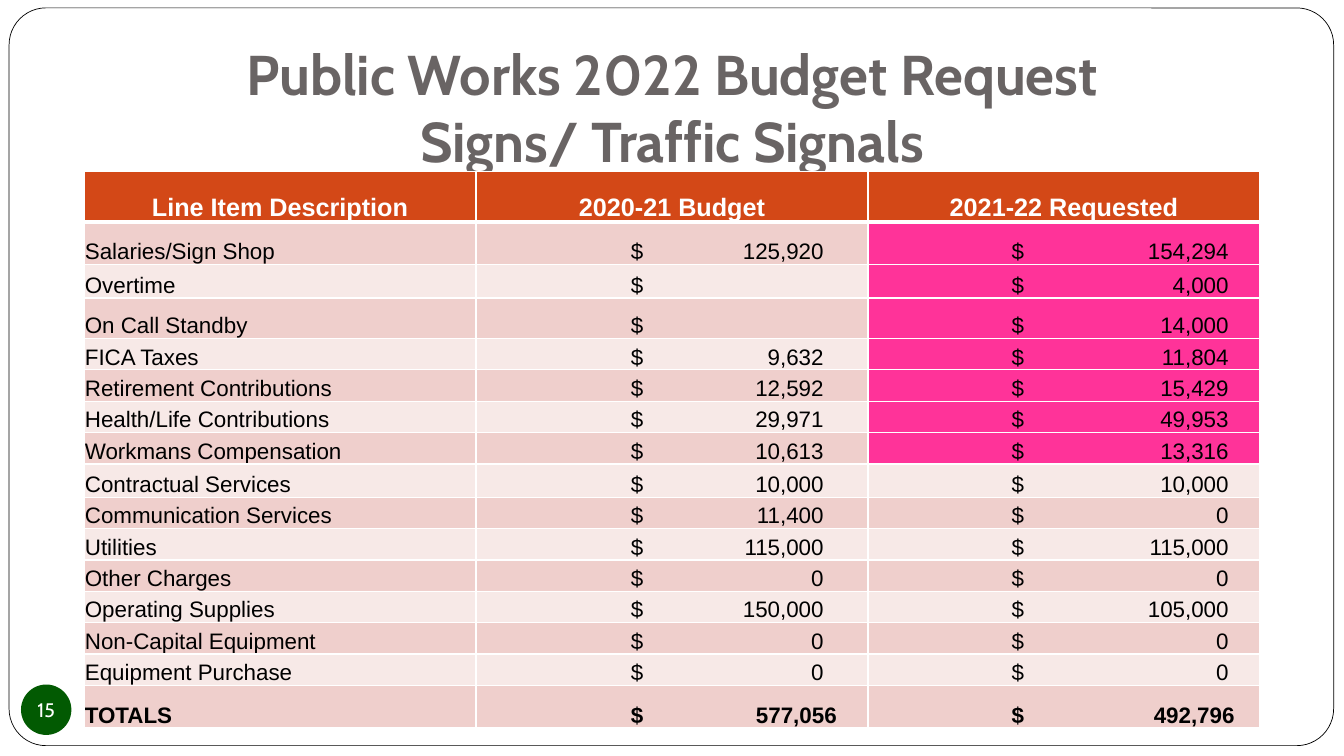
from lxml.etree import SubElement
from pptx import Presentation
from pptx.dml.color import RGBColor
from pptx.enum.shapes import MSO_SHAPE as SHAPE
from pptx.enum.text import MSO_ANCHOR as ANCHOR, MSO_AUTO_SIZE as AUTO, PP_ALIGN as ALIGN
from pptx.oxml.ns import qn
from pptx.util import Cm, Pt

TITLE = "Public Works 2022 Budget Request\vSigns/ Traffic Signals"
PAGE = "15"
HEADERS = ["Line Item Description", "2020-21 Budget", "2021-22 Requested"]
ITEMS = [
    ("Salaries/Sign Shop", "125,920", "154,294"),
    ("Overtime", "", "4,000"),
    ("On Call Standby", "", "14,000"),
    ("FICA Taxes", "9,632", "11,804"),
    ("Retirement Contributions", "12,592", "15,429"),
    ("Health/Life Contributions", "29,971", "49,953"),
    ("Workmans Compensation", "10,613", "13,316"),
    ("Contractual Services", "10,000", "10,000"),
    ("Communication Services", "11,400", "0"),
    ("Utilities", "115,000", "115,000"),
    ("Other Charges", "0", "0"),
    ("Operating Supplies", "150,000", "105,000"),
    ("Non-Capital Equipment", "0", "0"),
    ("Equipment Purchase", "0", "0"),
    ("TOTALS", "577,056", "492,796"),
]
PERSONNEL_ROWS = 7
TOTAL_ROW = len(ITEMS)
ROW_HEIGHT = 0.79
TALL_ROWS = {0: 1.27, 1: 1.07, 2: 0.84, 3: 1.02, 8: 0.84, TOTAL_ROW: 1.07}
DOLLAR_TABS = {1: 3.88, 2: 3.6}
AMOUNT_TABS = {1: 8.74, 2: 9.07}
TOTAL_TABS = {1: 9.07, 2: 9.22}

WHITE = RGBColor(0xFF, 0xFF, 0xFF)
BLACK = RGBColor(0, 0, 0)
GRAY = RGBColor(0x69, 0x64, 0x64)
ORANGE = RGBColor(0xD3, 0x48, 0x17)
ROSE = RGBColor(0xEF, 0xCF, 0xCC)
PALE = RGBColor(0xF7, 0xE9, 0xE7)
PINK = RGBColor(0xFF, 0x33, 0x99)
GREEN = RGBColor(0x02, 0x5A, 0x02)


def write(tf, text, font="Arial", size=16, color=BLACK, bold=False, align=ALIGN.LEFT):
    p = tf.paragraphs[0]
    p.text = text
    p.alignment = align
    for r in p.runs:
        r.font.name, r.font.size, r.font.bold = font, Pt(size), bold
        r.font.color.rgb = color
    return p


def set_margins(box, left, top, right, bottom):
    box.margin_left, box.margin_top = Cm(left), Cm(top)
    box.margin_right, box.margin_bottom = Cm(right), Cm(bottom)


def add_tabs(p, dollar, amount):
    tabs = SubElement(p._p.get_or_add_pPr(), qn("a:tabLst"))
    for pos, algn in ((dollar, "l"), (amount, "r")):
        SubElement(tabs, qn("a:tab"), pos=str(Cm(pos)), algn=algn)


def add_borders(cell, bottom):
    tcPr = cell._tc.get_or_add_tcPr()
    widths = {"lnL": 1, "lnR": 1, "lnT": 1, "lnB": bottom}
    for i, (side, width) in enumerate(widths.items()):
        ln = tcPr.makeelement(qn(f"a:{side}"), {"w": str(Pt(width))})
        fill = SubElement(ln, qn("a:solidFill"))
        SubElement(fill, qn("a:srgbClr"), val=str(WHITE))
        tcPr.insert(i, ln)


def add_plain_shape(s, kind, left, top, width, height, color):
    sp = s.shapes.add_shape(kind, Cm(left), Cm(top), Cm(width), Cm(height))
    sp.shadow.inherit = False
    sp.fill.solid()
    sp.fill.fore_color.rgb = color
    sp.line.fill.background()
    return sp


def fill_cell(cell, row, col):
    cell.vertical_anchor = ANCHOR.BOTTOM
    set_margins(cell, 0.02, 0.02, 0.02, 0)
    cell.fill.solid()
    if row == 0:
        cell.fill.fore_color.rgb = ORANGE
        write(cell.text_frame, HEADERS[col], size=18, color=WHITE, bold=True, align=ALIGN.CENTER)
    else:
        requested = col == 2 and row <= PERSONNEL_ROWS
        cell.fill.fore_color.rgb = PINK if requested else ROSE if row % 2 else PALE
        value = ITEMS[row - 1][col]
        total = row == TOTAL_ROW
        text = value if col == 0 else f"\t$\t{value}" if value else "\t$"
        p = write(cell.text_frame, text, bold=total)
        if col:
            add_tabs(p, DOLLAR_TABS[col], (TOTAL_TABS if total else AMOUNT_TABS)[col])
    add_borders(cell, 1 if row else 3)


def main():
    prs = Presentation()
    prs.slide_width, prs.slide_height = Cm(33.87), Cm(19.05)
    s = prs.slides.add_slide(prs.slide_layouts[5])

    title = s.shapes.title
    title.left, title.top, title.width, title.height = Cm(5.51), Cm(0.76), Cm(22.86), Cm(3.18)
    tf = title.text_frame
    tf.word_wrap, tf.auto_size, tf.vertical_anchor = True, AUTO.NONE, ANCHOR.TOP
    set_margins(tf, 0.25, 0.23, 0.25, 0.25)
    write(tf, TITLE, font="Cabin", size=40, color=GRAY, bold=True, align=ALIGN.CENTER)

    frame = add_plain_shape(s, SHAPE.ROUNDED_RECTANGLE, 0.23, 0.2, 33.38, 18.59, WHITE)
    frame.adjustments[0] = 0.05
    frame.line.color.rgb = BLACK
    frame.line.width = Pt(0.5)
    title._element.addprevious(frame._element)

    heights = [TALL_ROWS.get(i, ROW_HEIGHT) for i in range(TOTAL_ROW + 1)]
    table = s.shapes.add_table(len(heights), len(HEADERS), Cm(2.12), Cm(4.33),
                               Cm(29.63), Cm(sum(heights))).table
    for row, height in enumerate(heights):
        table.rows[row].height = Cm(height)
        for col in range(len(HEADERS)):
            fill_cell(table.cell(row, col), row, col)

    badge = add_plain_shape(s, SHAPE.OVAL, 0.53, 17.25, 1.27, 1.27, GREEN)
    tf = badge.text_frame
    tf.word_wrap, tf.vertical_anchor = False, ANCHOR.MIDDLE
    set_margins(tf, 0, 0, 0, 0)
    write(tf, PAGE, font="Cabin", size=14, color=WHITE, align=ALIGN.CENTER)

    prs.save("out.pptx")


if __name__ == "__main__":
    main()
